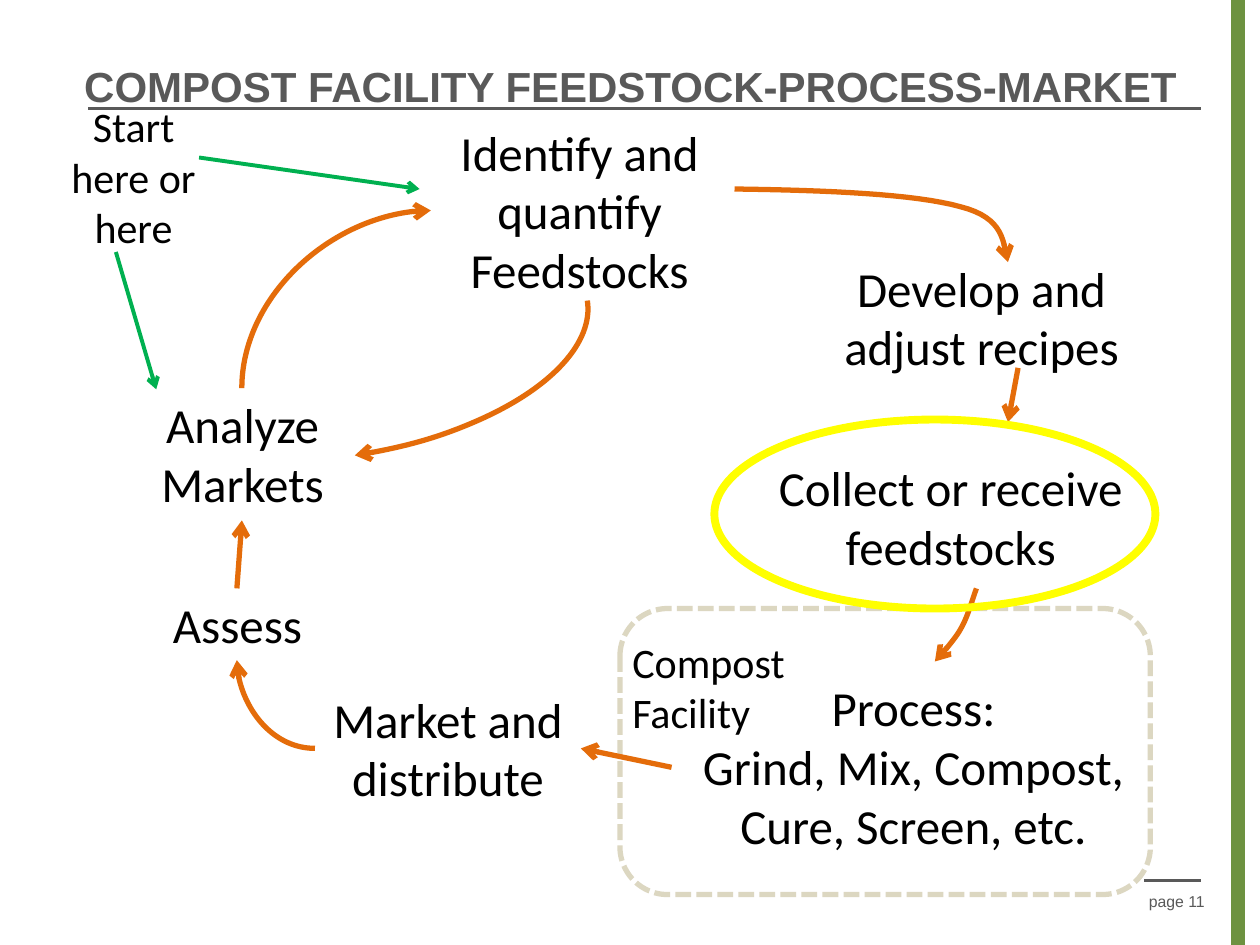
from pptx import Presentation, util as u
from pptx.dml.color import RGBColor
from pptx.enum import dml, shapes, text
from pptx.oxml import ns
from lxml import etree

INCH = u.Inches
GREY, ORANGE, GREEN = "595959", "E46C0A", "00B050"
MID, LEFT, RIGHT = text.PP_ALIGN.CENTER, text.PP_ALIGN.LEFT, text.PP_ALIGN.RIGHT
TOP, CENTRE = text.MSO_ANCHOR.TOP, text.MSO_ANCHOR.MIDDLE
KIND = shapes.MSO_SHAPE

STEPS = [
    ("Identify and quantify Feedstocks", 3.42, 0.92, 2.36, 1.51),
    ("Analyze Markets", 0.67, 3.08, 2.51, 1.04),
    ("Develop and adjust recipes", 6.25, 2, 3.08, 1.04),
    ("Collect or receive feedstocks", 5.92, 3.58, 3.25, 1.04),
    ("Process:\nGrind, Mix, Compost, Cure, Screen, etc.", 5.33, 5.33, 3.84, 1.51),
    ("Market and distribute", 2.5, 5.42, 2.11, 1.04),
    ("Assess", 0.92, 4.67, 1.93, 0.57),
]
ARROWS = [
    ((8.08, 2.92), (8, 3.35), ORANGE, 3),
    ((1.88, 4.67), (1.92, 4.13), ORANGE, 3),
    ((5.33, 6.09), (4.61, 5.94), ORANGE, 3),
    ((1.58, 1.25), (3.33, 1.5), GREEN, 2.25),
    ((0.92, 2), (1.24, 3.09), GREEN, 2.25),
]
TO_PROCESS = [
    ((7.75, 4.67), (7.71, 4.78), (7.68, 4.9), (7.62, 5)),
    ((7.62, 5), (7.57, 5.09), (7.42, 5.25), (7.42, 5.25)),
]
TO_RECIPES = [
    ((5.83, 1.5), (6.57, 1.51), (7.26, 1.54), (7.62, 1.64)),
    ((7.62, 1.64), (7.98, 1.73), (7.96, 1.93), (8, 2.08)),
]


def colour(code):
    """Turn a hex string into a colour."""
    return RGBColor.from_string(code)


def stroke(item, code, width, tip=None):
    """Style a line, with an open arrowhead at the named end."""
    item.line.color.rgb = colour(code)
    item.line.width = u.Pt(width)
    if tip:
        etree.SubElement(item.line._get_or_add_ln(), ns.qn(f"a:{tip}"), type="arrow")


def link(slide, start, end, code, width, tip=None, bent=False):
    """Join two points with a straight line or a quarter curve."""
    kind = shapes.MSO_CONNECTOR.CURVE if bent else shapes.MSO_CONNECTOR.STRAIGHT
    item = slide.shapes.add_connector(kind, *map(INCH, start + end))
    props = item._element.spPr
    if bent:
        props.find(ns.qn("a:prstGeom")).set("prst", "curvedConnector2")
    stroke(item, code, width, tip)
    etree.SubElement(props, ns.qn("a:effectLst"))


def form(slide, kind, left, top, width, height, fill=None):
    """Add a preset shape with a plain fill or none, and no outline."""
    item = slide.shapes.add_shape(kind, *map(INCH, (left, top, width, height)))
    item.shadow.inherit = False
    if fill:
        item.fill.solid()
        item.fill.fore_color.rgb = colour(fill)
    else:
        item.fill.background()
    item.line.fill.background()
    return item


def bezier(curve, t):
    """Find the point at t on a cubic curve."""
    s = 1 - t
    parts = (s**3, 3 * s * s * t, 3 * s * t * t, t**3)
    return tuple(INCH(sum(k * p[i] for k, p in zip(parts, curve))) for i in (0, 1))


def sweep(slide, curves, steps=16):
    """Draw an orange arrow along a chain of cubic curves."""
    points = [bezier(c, n / steps) for c in curves for n in range(1, steps + 1)]
    pen = slide.shapes.build_freeform(*bezier(curves[0], 0))
    pen.add_line_segments(points, close=False)
    item = pen.convert_to_shape()
    item.shadow.inherit = False
    item.fill.background()
    stroke(item, ORANGE, 3, "tailEnd")


def label(slide, words, left, top, width, height, size=28, align=MID,
          font="Calibri", code="000000", bold=False, anchor=TOP):
    """Add a wrapped text box in one style."""
    box = slide.shapes.add_textbox(*map(INCH, (left, top, width, height)))
    frame = box.text_frame
    frame.word_wrap = True
    frame.vertical_anchor = anchor
    frame.text = words
    for para in frame.paragraphs:
        para.alignment = align
        for run in para.runs:
            run.font.name, run.font.size, run.font.bold = font, u.Pt(size), bold
            run.font.color.rgb = colour(code)


def page(slide):
    """Add the title, rules, side band and page number."""
    link(slide, (0.7, 0.86), (9.53, 0.86), GREY, 1.5)
    link(slide, (9.08, 6.99), (9.53, 6.99), GREY, 1.5)
    form(slide, KIND.RECTANGLE, 9.77, 0, 0.11, 7.5, "6D9240")
    label(slide, "page 11", 7.33, 6.95, 2.33, 0.4, 9, RIGHT, "Arial", GREY, anchor=CENTRE)
    label(slide, "COMPOST FACILITY FEEDSTOCK-PROCESS-MARKET", 0.57, 0.43, 8.96, 0.44,
          24, LEFT, "Arial", GREY, True)


def cycle(slide):
    """Add the steps, the arrows between them and the marked areas."""
    for step in STEPS:
        label(slide, *step)
    plant = form(slide, KIND.ROUNDED_RECTANGLE, 4.92, 4.83, 4.21, 2.27)
    stroke(plant, "DCD7C1", 3)
    plant.line.dash_style = dml.MSO_LINE.SQUARE_DOT
    label(slide, "Compost Facility", 4.92, 5, 2, 0.42, 24, LEFT)
    label(slide, "Start here or here", 0.42, 0.75, 1.28, 1.31, 24)
    for arrow in ARROWS:
        link(slide, *arrow, "tailEnd")
    link(slide, (3.42, 1.67), (1.92, 3.08), ORANGE, 3, "headEnd", True)
    link(slide, (2.5, 5.94), (1.88, 5.24), ORANGE, 3, "tailEnd", True)
    sweep(slide, TO_PROCESS)
    arc = form(slide, KIND.ARC, 1.74, 0.68, 1.87, 4.02)
    arc.rotation = 81.3
    stroke(arc, ORANGE, 3, "tailEnd")
    stroke(form(slide, KIND.OVAL, 5.67, 3.33, 3.5, 1.5), "FFFF00", 4.5)
    sweep(slide, TO_RECIPES)


def main():
    """Build and save the slide."""
    deck = Presentation()
    deck.slide_width, deck.slide_height = INCH(10), INCH(7.5)
    slide = deck.slides.add_slide(deck.slide_layouts[6])
    page(slide)
    cycle(slide)
    deck.save("out.pptx")


if __name__ == "__main__":
    main()
